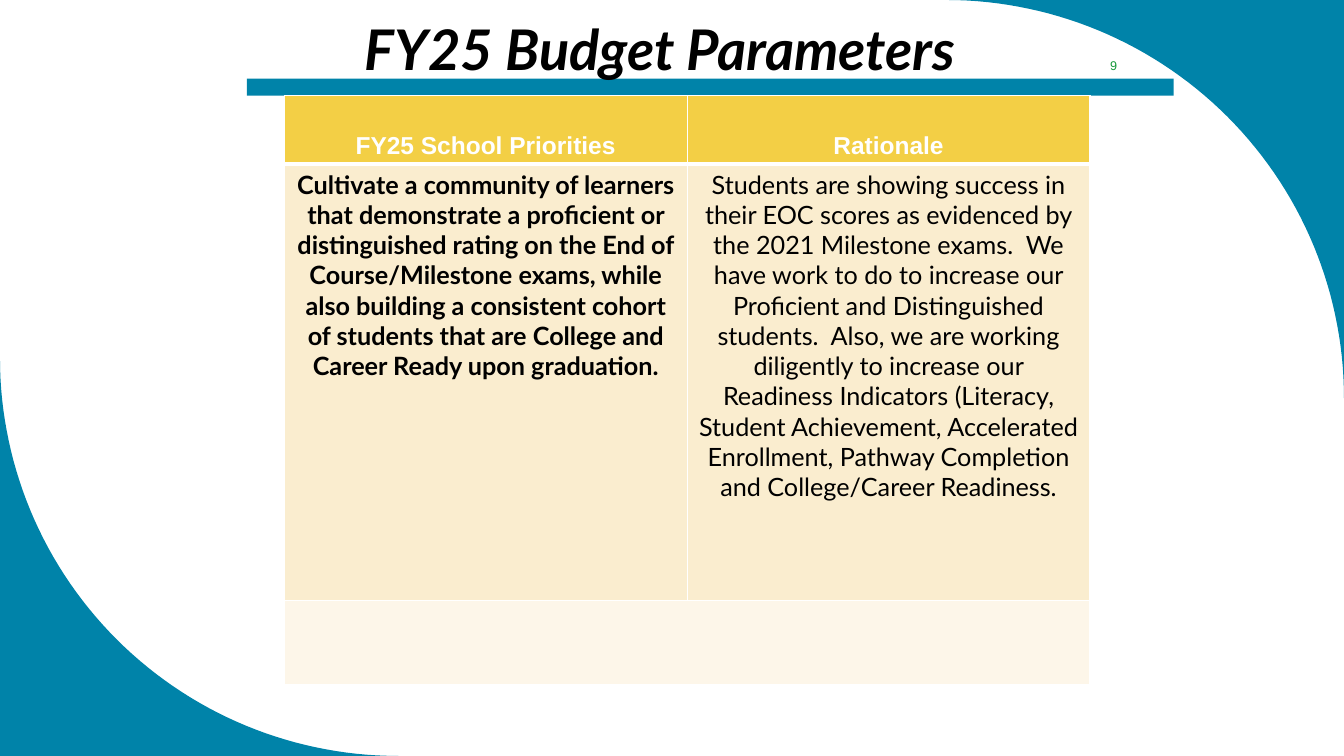
"""Build the FY25 budget parameters slide with its priorities table."""

from dataclasses import dataclass
from math import cos, pi, sin

from lxml.etree import SubElement
from pptx import Presentation
from pptx.dml.color import RGBColor
from pptx.enum.shapes import MSO_SHAPE
from pptx.enum.text import MSO_ANCHOR, PP_ALIGN
from pptx.oxml.ns import qn
from pptx.shapes.base import BaseShape
from pptx.slide import Slide
from pptx.table import _Cell
from pptx.text.text import TextFrame
from pptx.util import Emu, Inches, Pt

WIDTH = Inches(13.33)
HEIGHT = Inches(7.5)


@dataclass(frozen=True)
class Style:
    size: float
    color: str
    font: str = "Lato"
    bold: bool = False
    italic: bool = False


@dataclass(frozen=True)
class Theme:
    teal: str = "0083A9"
    white: str = "FFFFFF"
    gold: str = "F3CF45"
    sand: str = "FAEDCF"
    cream: str = "FDF6E9"
    title: Style = Style(40, "000000", bold=True, italic=True)
    heading: Style = Style(17.5, "FFFFFF", "Arial", bold=True)
    priority: Style = Style(18, "000000", bold=True)
    rationale: Style = Style(18, "000000")
    number: Style = Style(9, "159839", "Arial")


@dataclass(frozen=True)
class Area:
    """A box in percent of the slide's width and height."""

    left: float
    top: float
    width: float
    height: float

    def emu(self) -> tuple[Emu, Emu, Emu, Emu]:
        return (across(self.left), down(self.top),
                across(self.width), down(self.height))


@dataclass(frozen=True)
class Corner:
    """A slide corner given by its ends (0 or 1) on each axis."""

    right: int
    bottom: int


@dataclass(frozen=True)
class Entry:
    text: str
    style: Style


@dataclass(frozen=True)
class TableRow:
    height: float
    fill: str
    entries: tuple[Entry, ...] = ()
    anchor: MSO_ANCHOR = MSO_ANCHOR.TOP
    rule: float = 1


THEME = Theme()
RADIUS = 52.67
ARC_STEPS = 60
CORNERS = (Corner(1, 0), Corner(0, 1))
BAR = Area(18.38, 10.4, 68.94, 2.27)
TITLE = Area(22.88, 1.2, 52.44, 10.27)
NUMBER = Area(79.82, 6.67, 6.08, 4)
TABLE = Area(21.16, 12.67, 59.94, 77.87)
ROWS = (
    TableRow(9.07, THEME.gold, (
        Entry("FY25 School Priorities", THEME.heading),
        Entry("Rationale", THEME.heading),
    ), MSO_ANCHOR.BOTTOM, 3),
    TableRow(57.73, THEME.sand, (
        Entry("Cultivate a community of learners that demonstrate a proficient or "
              "distinguished rating on the End of Course/Milestone exams, while also "
              "building a consistent cohort of students that are College and Career "
              "Ready upon graduation.", THEME.priority),
        Entry("Students are showing success in their EOC scores as evidenced by the "
              "2021 Milestone exams.  We have work to do to increase our Proficient "
              "and Distinguished students.  Also, we are working diligently to "
              "increase our Readiness Indicators (Literacy, Student Achievement, "
              "Accelerated Enrollment, Pathway Completion and College/Career "
              "Readiness.", THEME.rationale),
    )),
    TableRow(11.07, THEME.cream),
)


def across(percent: float) -> Emu:
    """Turn a percentage of the slide width into a length."""
    return Emu(round(WIDTH * percent / 100))


def down(percent: float) -> Emu:
    """Turn a percentage of the slide height into a length."""
    return Emu(round(HEIGHT * percent / 100))


def write(frame: TextFrame, text: str, style: Style) -> None:
    """Fill a frame with one centred, formatted paragraph."""
    frame.text = text
    frame.word_wrap = True
    para = frame.paragraphs[0]
    para.alignment = PP_ALIGN.CENTER
    for span in para.runs:
        span.font.name = style.font
        span.font.size = Pt(style.size)
        span.font.bold = style.bold
        span.font.italic = style.italic
        span.font.color.rgb = RGBColor.from_string(style.color)


def paint(shape: BaseShape, color: str) -> None:
    """Give a shape a flat fill without line or shadow."""
    shape.fill.solid()
    shape.fill.fore_color.rgb = RGBColor.from_string(color)
    shape.line.fill.background()
    shape.shadow.inherit = False


def draw_corner(page: Slide, corner: Corner) -> None:
    """Draw the part of a slide corner left outside a quarter circle."""
    radius = down(RADIUS)
    tip_x, tip_y = WIDTH * corner.right, HEIGHT * corner.bottom
    side_x, side_y = 2 * corner.right - 1, 2 * corner.bottom - 1
    angles = [pi / 2 * step / ARC_STEPS for step in range(ARC_STEPS + 1)]
    arc = [(round(tip_x - side_x * radius * (1 - sin(angle))),
            round(tip_y - side_y * radius * (1 - cos(angle)))) for angle in angles]
    builder = page.shapes.build_freeform(tip_x, tip_y)
    builder.add_line_segments(arc, close=True)
    paint(builder.convert_to_shape(), THEME.teal)


def add_borders(cell: _Cell, top: float, bottom: float) -> None:
    """Outline a cell in white with the given top and bottom widths."""
    properties = cell._tc.get_or_add_tcPr()
    for edge, width in (("lnL", 1), ("lnR", 1), ("lnT", top), ("lnB", bottom)):
        line = SubElement(properties, qn(f"a:{edge}"), w=str(Pt(width)))
        fill = SubElement(line, qn("a:solidFill"))
        SubElement(fill, qn("a:srgbClr"), val=THEME.white)


def draw_table(page: Slide) -> None:
    """Draw the priorities table with a merged closing row."""
    table = page.shapes.add_table(len(ROWS), 2, *TABLE.emu()).table
    table.first_row = table.horz_banding = False
    top_rule = 1
    for index, row in enumerate(ROWS):
        table.rows[index].height = down(row.height)
        for cell in table.rows[index].cells:
            add_borders(cell, top_rule, row.rule)
            cell.fill.solid()
            cell.fill.fore_color.rgb = RGBColor.from_string(row.fill)
            cell.vertical_anchor = row.anchor
        for column, entry in enumerate(row.entries):
            write(table.cell(index, column).text_frame, entry.text, entry.style)
        top_rule = row.rule
    last = len(ROWS) - 1
    table.cell(last, 0).merge(table.cell(last, 1))


def draw_title(page: Slide) -> None:
    """Place the title in front of the bar."""
    title = page.shapes.title
    title.left, title.top, title.width, title.height = TITLE.emu()
    write(title.text_frame, "FY25 Budget Parameters", THEME.title)
    title.text_frame.vertical_anchor = MSO_ANCHOR.TOP
    title.element.getparent().append(title.element)


def main() -> None:
    """Build and save the deck."""
    deck = Presentation()
    deck.slide_width, deck.slide_height = WIDTH, HEIGHT
    page = deck.slides.add_slide(deck.slide_layouts[5])
    for corner in CORNERS:
        draw_corner(page, corner)
    paint(page.shapes.add_shape(MSO_SHAPE.RECTANGLE, *BAR.emu()), THEME.teal)
    draw_title(page)
    draw_table(page)
    number = page.shapes.add_textbox(*NUMBER.emu())
    write(number.text_frame, "9", THEME.number)
    number.text_frame.vertical_anchor = MSO_ANCHOR.MIDDLE
    deck.save("out.pptx")


if __name__ == "__main__":
    main()
